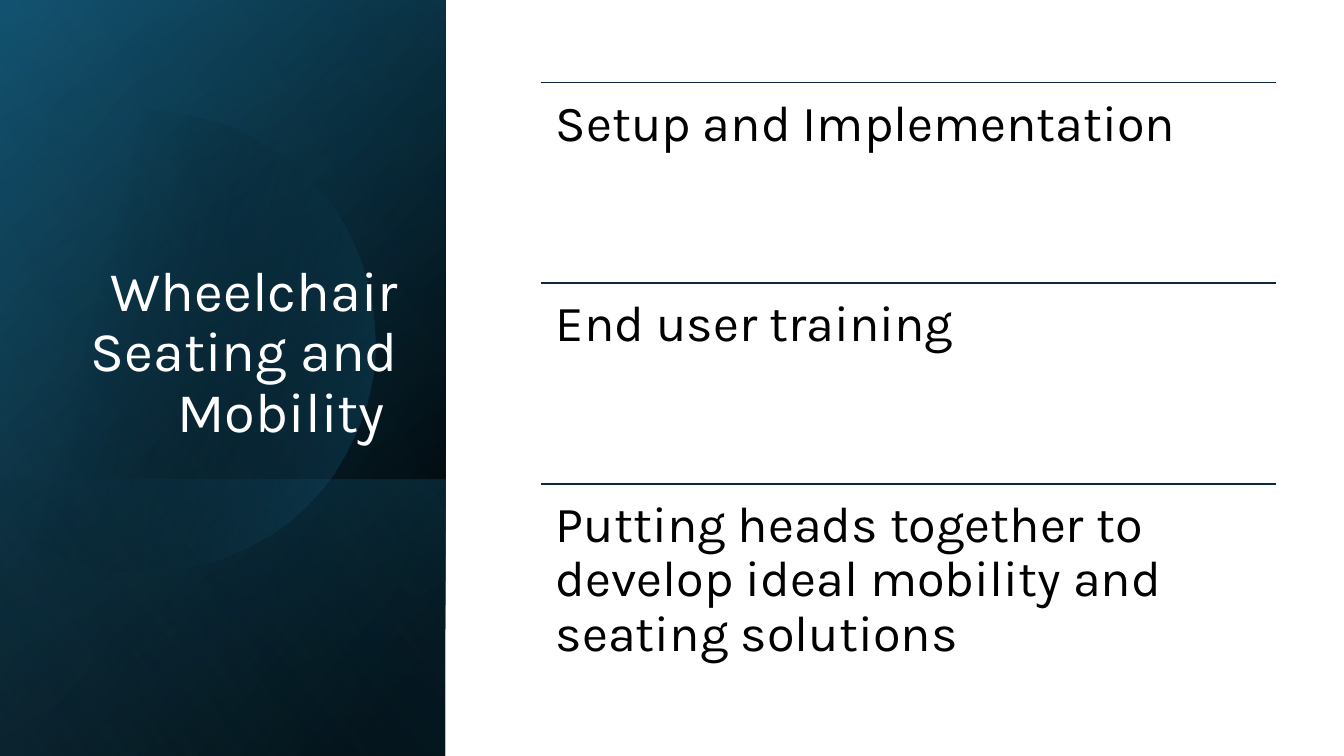
from dataclasses import dataclass

from lxml import etree
from pptx import Presentation
from pptx.dml.color import RGBColor
from pptx.enum.shapes import MSO_CONNECTOR, MSO_SHAPE
from pptx.enum.text import MSO_ANCHOR, MSO_AUTO_SIZE, PP_ALIGN
from pptx.oxml.ns import qn
from pptx.util import Pt

RECTANGLE = MSO_SHAPE.RECTANGLE
STRAIGHT = MSO_CONNECTOR.STRAIGHT
TOP, BOTTOM = MSO_ANCHOR.TOP, MSO_ANCHOR.BOTTOM
LEFT, RIGHT = PP_ALIGN.LEFT, PP_ALIGN.RIGHT
NO_FIT = MSO_AUTO_SIZE.NONE
TITLE_ONLY = 5


@dataclass(frozen=True)
class Theme:
    font: str = "Karla"
    title_size: int = 40
    item_size: int = 36
    title: str = "FFFFFF"
    text: str = "000000"
    rule: str = "0E2841"
    black: str = "000000"
    deep: str = "104862"
    blue: str = "156082"
    sky: str = "46B1E1"


THEME = Theme()
TITLE = "Wheelchair Seating and Mobility "
ITEMS = [
    "Setup and Implementation",
    "End user training",
    "Putting heads together to develop ideal mobility and seating solutions",
]

# Clipped circle: start point, then cubic curves (two controls and an end point)
CIRCLE_START = (107.3, 79.2)
CIRCLE_CURVES = [
    ((177.1, 80.6), (241.2, 127.4), (261.4, 198)),
    ((286.6, 285.8), (236.2, 376.6), (149, 401.8)),
    ((94.3, 417.6), (38.2, 403.9), (0, 370.1)),
]
CIRCLE_CLOSING = [
    ((0, 115.9), (0, 115.9), (0, 115.9)),
    ((16.6, 102.2), (36, 92.2), (57.6, 85.7)),
    ((74.2, 81.4), (90.7, 79.2), CIRCLE_START),
]


def paint_gradient(shape, stops, angle):
    """Fill with (position, colour, opacity) stops, all but colour in percent."""
    shape.shadow.inherit = False
    shape.line.fill.background()
    shape.fill.gradient()
    gradient = shape._element.spPr.find(qn("a:gradFill"))
    stop_list = gradient.find(qn("a:gsLst"))
    for old_stop in list(stop_list):
        stop_list.remove(old_stop)
    for position, colour, opacity in stops:
        stop = etree.SubElement(stop_list, qn("a:gs"), pos=str(position * 1000))
        paint = etree.SubElement(stop, qn("a:srgbClr"), val=colour)
        if opacity < 100:
            etree.SubElement(paint, qn("a:alpha"), val=str(opacity * 1000))
    gradient.find(qn("a:lin")).set("ang", str(angle * 60000))


def add_turned_panel(page, box, stops, angle):
    """Cover the box with a mirrored rectangle turned by a quarter."""
    left, top, width, height = box
    shift = (width - height) / 2
    panel = page.shapes.add_shape(
        RECTANGLE, Pt(left + shift), Pt(top - shift), Pt(height), Pt(width))
    panel.rotation = 90
    panel._element.spPr.find(qn("a:xfrm")).set("flipH", "1")
    paint_gradient(panel, stops, angle)


def curve_points(start, curves, steps=16):
    points = []
    for first, second, end in curves:
        for step in range(1, steps + 1):
            t = step / steps
            weights = ((1 - t) ** 3, 3 * t * (1 - t) ** 2, 3 * t * t * (1 - t), t ** 3)
            corners = (start, first, second, end)
            points.append(tuple(
                sum(weight * corner[axis] for weight, corner in zip(weights, corners))
                for axis in (0, 1)))
        start = end
    return points


def add_circle(page, left, top):
    start_x, start_y = left + CIRCLE_START[0], top + CIRCLE_START[1]
    builder = page.shapes.build_freeform(start_x, start_y, scale=Pt(1))
    points = curve_points(CIRCLE_START, CIRCLE_CURVES + CIRCLE_CLOSING)
    builder.add_line_segments([(left + x, top + y) for x, y in points], close=True)
    circle = builder.convert_to_shape()
    paint_gradient(circle, [(29, THEME.black, 0), (100, THEME.blue, 43)], 14)


def write_text(frame, text, size, colour, align, anchor):
    frame.text = text
    frame.word_wrap = True
    frame.auto_size = NO_FIT
    frame.vertical_anchor = anchor
    para = frame.paragraphs[0]
    para.alignment = align
    para.line_spacing = 0.9
    para.space_before = Pt(0)
    font = para.runs[0].font
    font.name, font.size = THEME.font, Pt(size)
    font.color.rgb = RGBColor.from_string(colour)


def add_title_panel(page, box):
    left, top, width, height = box
    lower_height = 197.3
    lower = (left, top + height - lower_height, width, lower_height)

    # Layered background
    add_turned_panel(page, box, [(8, THEME.black, 100), (100, THEME.deep, 100)], 50)
    add_turned_panel(page, box, [(0, THEME.black, 0), (99, THEME.blue, 46)], 30)
    add_turned_panel(page, lower, [(2, THEME.blue, 29), (100, THEME.black, 30)], 130)
    add_circle(page, left, top)
    add_turned_panel(page, box, [(0, THEME.black, 0), (99, THEME.sky, 11)], 120)

    # Title, brought in front of the background
    title = page.shapes.title
    page.shapes._spTree.append(title._element)
    title.left, title.top = Pt(left + 46), Pt(top + 132.5)
    title.width, title.height = Pt(245.5), Pt(188.6)
    write_text(title.text_frame, TITLE, THEME.title_size, THEME.title, RIGHT, BOTTOM)


def add_item_list(page, box):
    left, top, width, height = box
    row_height = height / len(ITEMS)
    for index, item in enumerate(ITEMS):
        row_top = top + index * row_height

        # Rule above the item
        rule = page.shapes.add_connector(
            STRAIGHT, Pt(left), Pt(row_top), Pt(left + width), Pt(row_top))
        rule.line.color.rgb = RGBColor.from_string(THEME.rule)
        rule.line.width = Pt(1)
        etree.SubElement(rule._element.spPr, qn("a:effectLst"))

        # Item text
        label = page.shapes.add_textbox(Pt(left), Pt(row_top), Pt(width), Pt(row_height))
        frame = label.text_frame
        frame.margin_left = frame.margin_right = Pt(10.8)
        frame.margin_top = frame.margin_bottom = Pt(10.8)
        write_text(frame, item, THEME.item_size, THEME.text, LEFT, TOP)


def main():
    deck = Presentation()
    deck.slide_width, deck.slide_height = Pt(960), Pt(540)
    page = deck.slides.add_slide(deck.slide_layouts[TITLE_ONLY])
    add_title_panel(page, (0, 0, 318.2, 540))
    add_item_list(page, (386.2, 59, 525, 429.9))
    deck.save("out.pptx")


if __name__ == "__main__":
    main()
